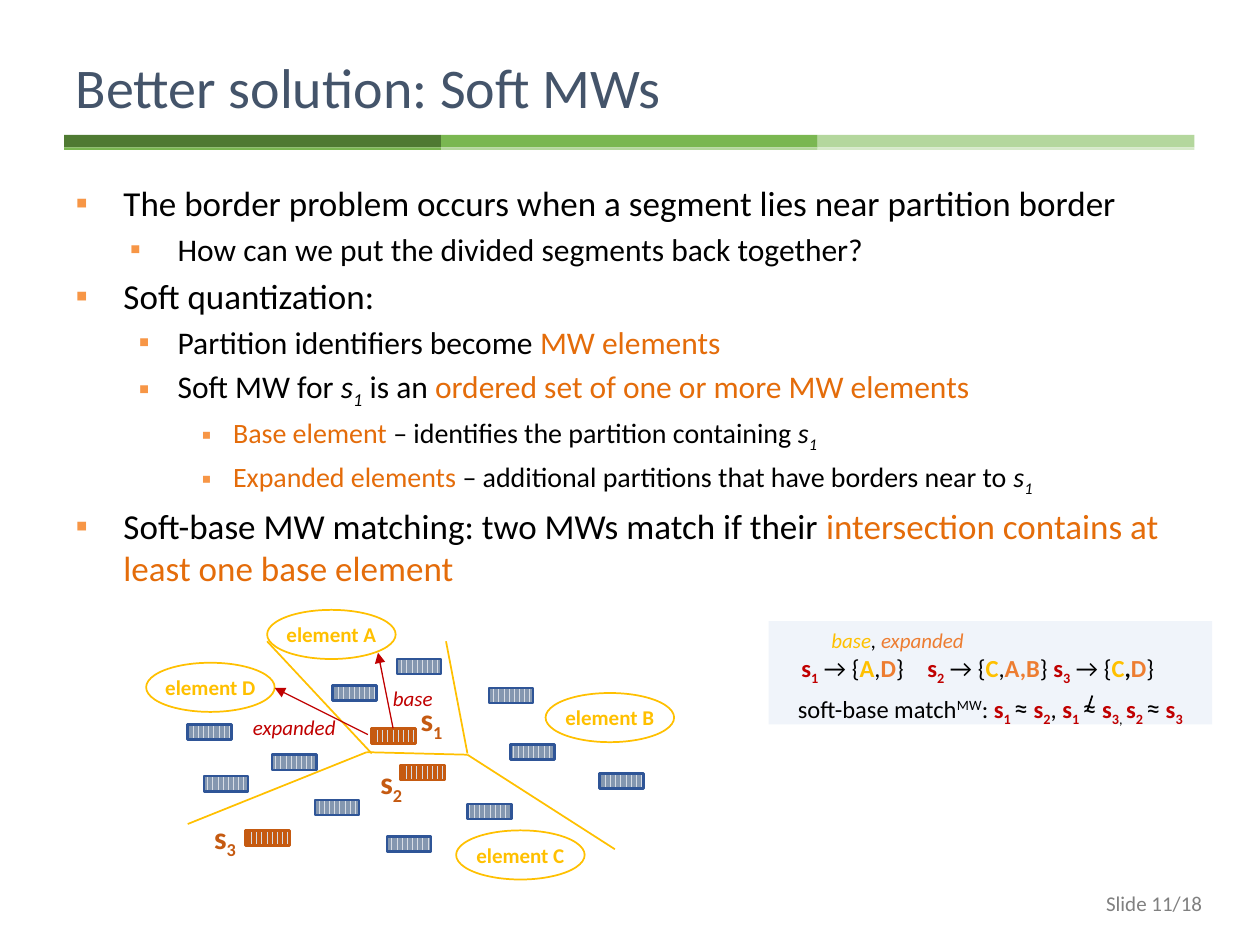
from lxml.etree import SubElement
from pptx import Presentation
from pptx.dml.color import RGBColor
from pptx.enum.dml import MSO_PATTERN
from pptx.enum.shapes import MSO_CONNECTOR, MSO_SHAPE
from pptx.enum.text import MSO_ANCHOR, MSO_AUTO_SIZE, PP_ALIGN
from pptx.oxml.ns import qn
from pptx.util import Inches, Pt

BLACK, ORANGE, GOLD, RED = "000000", "E46C0A", "FFC000", "C00000"
EXPANDED, RUST = "ED7D31", "C55A11"
rgb = RGBColor.from_string


def write(paragraph, size, runs):
    for text, color, style, *own_size in runs:
        run = paragraph.add_run()
        run.text = text
        font = run.font
        font.name, font.size = "Calibri", Pt(own_size[0] if own_size else size)
        font.color.rgb = rgb(color)
        font.bold, font.italic = "b" in style, "i" in style
        if "_" in style or "^" in style:
            run._r.get_or_add_rPr().set("baseline", "-25000" if "_" in style else "30000")


def draw_line(x1, y1, x2, y2, color, width, arrow=False):
    line = slide.shapes.add_connector(
        MSO_CONNECTOR.STRAIGHT, Inches(x1), Inches(y1), Inches(x2), Inches(y2))
    line.line.color.rgb = rgb(color)
    line.line.width = Pt(width)
    if arrow:
        SubElement(line.line._get_or_add_ln(), qn("a:tailEnd"), type="triangle")
    SubElement(line._element.spPr, qn("a:effectLst"))


prs = Presentation()
prs.slide_width, prs.slide_height = Inches(10), Inches(7.5)
slide = prs.slides.add_slide(prs.slide_layouts[1])
shapes = slide.shapes

for third, (band_color, edge_color) in enumerate(
        [("4F7A32", "7AB751"), ("7AB751", "B4D79D"), ("B4D79D", "D6E9C9")]):
    for top, height, color in [(1.07, 0.1, band_color), (1.17, 0.02, edge_color)]:
        band = shapes.add_shape(MSO_SHAPE.RECTANGLE, Inches(0.51 + third * 2.99),
                                Inches(top), Inches(2.99), Inches(height))
        band.shadow.inherit = False
        band.fill.solid()
        band.fill.fore_color.rgb = rgb(color)
        band.line.fill.background()

title = shapes.title
title.left, title.top, title.width, title.height = map(Inches, (0.5, 0.3, 9, 0.77))
title.text_frame.vertical_anchor = MSO_ANCHOR.MIDDLE
title.text_frame.auto_size = MSO_AUTO_SIZE.NONE
title.text_frame.paragraphs[0].alignment = PP_ALIGN.LEFT
write(title.text_frame.paragraphs[0], 32, [("Better solution: Soft MWs", "44546A", "")])

body = slide.placeholders[1]
body.left, body.top, body.width, body.height = map(Inches, (0.5, 1.39, 9, 5.59))
body.text_frame.auto_size = MSO_AUTO_SIZE.NONE
segment_1 = [("s", BLACK, "i"), ("1", BLACK, "i_")]
points = [
    (0, 0.38, 0.38, 20, [("The border problem occurs when a segment lies near partition border", BLACK, "")]),
    (1, 0.81, 0.38, 18, [("How can we put the divided segments back together?", BLACK, "")]),
    (0, 0.38, 0.38, 20, [("Soft quantization:", BLACK, "")]),
    (1, 0.81, 0.31, 18, [("Partition identifiers become ", BLACK, ""), ("MW elements", ORANGE, "")]),
    (1, 0.81, 0.31, 18, [("Soft MW for ", BLACK, ""), *segment_1, (" is an ", BLACK, ""),
                         ("ordered set of one or more MW elements", ORANGE, "")]),
    (2, 1.25, 0.25, 16, [("Base element ", ORANGE, ""),
                         ("– identifies the partition containing ", BLACK, ""), *segment_1]),
    (2, 1.25, 0.25, 16, [("Expanded elements ", ORANGE, ""),
                         ("– additional partitions that have borders near to ", BLACK, ""), *segment_1]),
    (0, 0.38, 0.38, 20, [("Soft-base MW matching: two MWs match if their ", BLACK, ""),
                         ("intersection contains at least one base element", ORANGE, "")]),
]
for index, (level, margin, hanging, size, runs) in enumerate(points):
    point = body.text_frame.add_paragraph() if index else body.text_frame.paragraphs[0]
    point.level = level
    props = point._p.get_or_add_pPr()
    props.set("marL", str(Inches(margin)))
    props.set("indent", str(-Inches(hanging)))
    SubElement(SubElement(props, qn("a:buClr")), qn("a:srgbClr"), val="F79646")
    SubElement(props, qn("a:buChar"), char="▪")
    write(point, size, runs)

for border in [(2.12, 5.09, 2.95, 5.98), (2.91, 5.97, 3.71, 5.99), (3.54, 5.09, 3.71, 5.98),
               (3.71, 5.99, 4.88, 6.74), (1.49, 6.54, 2.91, 5.97)]:
    draw_line(*border, GOLD, 1)

marked_segments = [(3.18, 6.07), (1.95, 6.59), (2.95, 5.78)]
other_segments = [(3.71, 6.38), (3.07, 6.64), (4.05, 5.91), (3.88, 5.46), (4.76, 6.14), (3.15, 5.23),
                  (2.64, 5.44), (1.49, 5.75), (1.62, 6.16), (2.16, 5.99), (2.5, 6.35)]
for places, stripe, outline in [(marked_segments, RUST, RUST), (other_segments, "8497B0", "2F5597")]:
    for left, top in places:
        segment = shapes.add_shape(MSO_SHAPE.RECTANGLE, Inches(left), Inches(top),
                                   Inches(0.35), Inches(0.12))
        segment.shadow.inherit = False
        segment.fill.patterned()
        segment.fill.pattern = MSO_PATTERN.DARK_VERTICAL
        segment.fill.fore_color.rgb = rgb(stripe)
        segment.fill.back_color.rgb = rgb("D6DCE5")
        segment.line.color.rgb = rgb(outline)
        segment.line.width = Pt(1.5)

for letter, left, top in [("A", 2.12, 4.84), ("B", 4.33, 5.5), ("D", 1.16, 5.26), ("C", 3.62, 6.59)]:
    element = shapes.add_shape(MSO_SHAPE.OVAL, Inches(left), Inches(top), Inches(1.02), Inches(0.39))
    element.shadow.inherit = False
    element.fill.background()
    element.line.color.rgb = rgb(GOLD)
    element.line.width = Pt(1)
    frame = element.text_frame
    frame.margin_left = frame.margin_right = frame.margin_top = frame.margin_bottom = 0
    frame.word_wrap = False
    frame.vertical_anchor = MSO_ANCHOR.MIDDLE
    frame.paragraphs[0].alignment = PP_ALIGN.CENTER
    write(frame.paragraphs[0], 12, [(f"element {letter}", GOLD, "b")])

draw_line(3.12, 5.78, 3, 5.18, RED, 0.75, arrow=True)
draw_line(2.92, 5.83, 2.18, 5.46, RED, 0.75, arrow=True)

panel = shapes.add_shape(MSO_SHAPE.RECTANGLE, Inches(6.1), Inches(4.93), Inches(3.52), Inches(0.82))
panel.shadow.inherit = False
panel.fill.solid()
panel.fill.fore_color.rgb = rgb("DAE3F3")
SubElement(panel._element.spPr.find(".//" + qn("a:srgbClr")), qn("a:alpha"), val="38000")
panel.line.fill.background()

labels = [
    (2.92, 6.01, 0.39, 0.4, 18, [("s", RUST, "b"), ("2", RUST, "b_")]),
    (3.24, 5.51, 0.39, 0.4, 18, [("s", RUST, "b"), ("1", RUST, "b_")]),
    (1.6, 6.44, 0.39, 0.4, 18, [("s", RUST, "b"), ("3", RUST, "b_")]),
    (3.02, 5.39, 0.52, 0.3, 12, [("base", RED, "i")]),
    (1.91, 5.62, 0.86, 0.3, 12, [("expanded", RED, "i")]),
    (6.5, 4.93, 1.26, 0.3, 12, [("base", GOLD, "i"), (",", BLACK, "i"), (" expanded", EXPANDED, "i")]),
    (7.28, 7, 2.36, 0.34, 12, [("Slide 11/18", "808080", "")]),
]
for left, top, width, height, size, runs in labels:
    label = shapes.add_textbox(Inches(left), Inches(top), Inches(width), Inches(height))
    label.text_frame.word_wrap = width > 2
    if width > 2:
        label.text_frame.vertical_anchor = MSO_ANCHOR.MIDDLE
        label.text_frame.paragraphs[0].alignment = PP_ALIGN.RIGHT
    write(label.text_frame.paragraphs[0], size, runs)

matches = shapes.add_textbox(Inches(6.1), Inches(5.13), Inches(3.52), Inches(0.64)).text_frame
matches.word_wrap = True
matches.margin_left = matches.margin_right = Inches(0.04)
words = matches.paragraphs[0]
words_props = words._p.get_or_add_pPr()
words_props.set("marL", str(Inches(0.22)))
words_props.set("indent", "0")
tab_stops = SubElement(words_props, qn("a:tabLst"))
for position in (1.25, 2.42):
    SubElement(tab_stops, qn("a:tab"), pos=str(Inches(position)), algn="l")
for number, base, comma_style, expanded, closing in [
        ("1", "A", "", "D", "}\t"), ("2", "C", "", "A,B", "}\t"), ("3", "C", "b", "D", "}")]:
    write(words, 14, [("s", RED, "b"), (number, RED, "b_"), (" → {", BLACK, ""), (base, GOLD, "b"),
                      (",", BLACK, comma_style), (expanded, EXPANDED, "b"), (closing, BLACK, "")])

pairs = matches.add_paragraph()
pairs.alignment = PP_ALIGN.CENTER
pairs.space_before = Pt(2.5)
write(pairs, 14, [("soft-base match", BLACK, ""), ("MW", BLACK, "^"), (":", BLACK, ""), (" ", RED, "b")])
for first, second, separator in [("1", "2", [(", ", BLACK, "")]), ("1", "3", [(", ", BLACK, "_")]),
                                 ("2", "3", [])]:
    write(pairs, 14, [("s", RED, "b"), (first + " ", RED, "b_"), ("≈", BLACK, "", 16), (" ", BLACK, ""),
                      ("s", RED, "b"), (second, RED, "b_"), *separator])
draw_line(8.67, 5.52, 8.63, 5.64, BLACK, 1)

prs.save("out.pptx")
